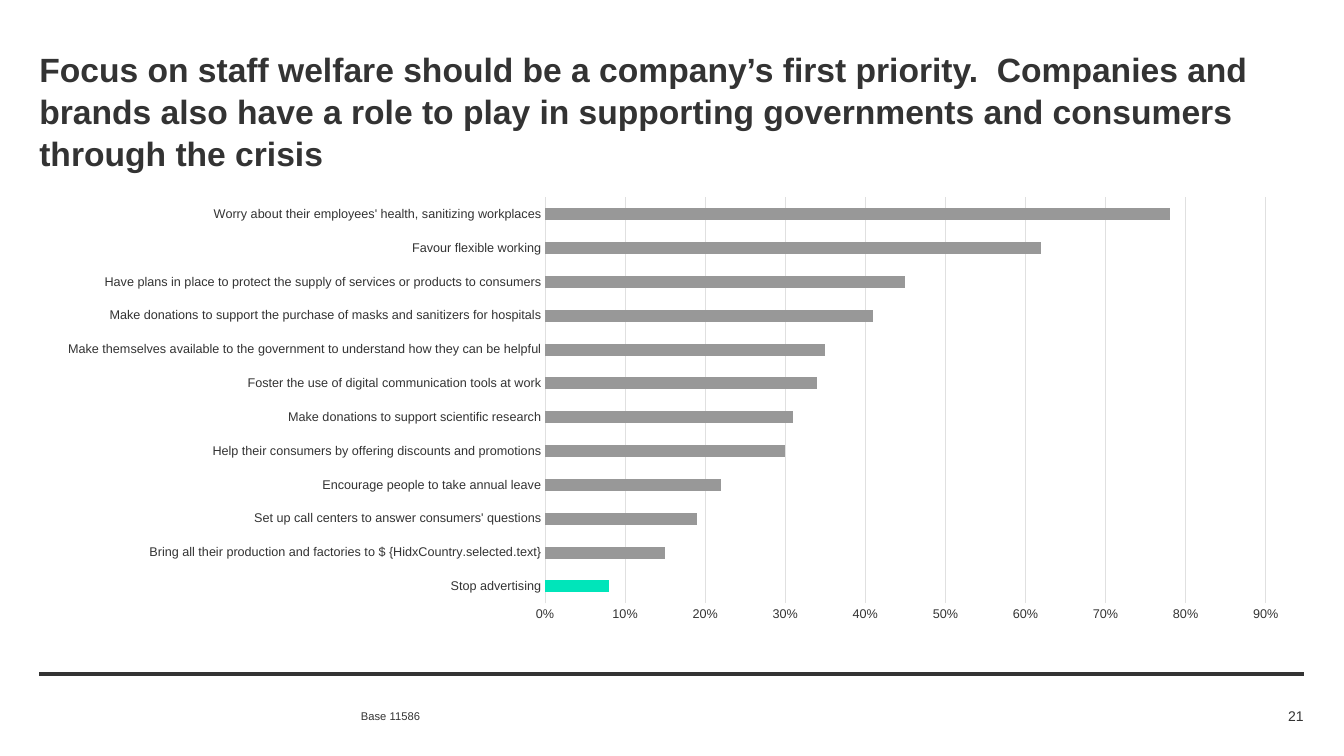
from lxml import etree
from pptx import Presentation
from pptx.chart.data import CategoryChartData as ChartData
from pptx.dml.color import RGBColor
from pptx.enum.chart import XL_CHART_TYPE as Kind, XL_TICK_MARK as Tick
from pptx.enum.shapes import MSO_CONNECTOR as Conn
from pptx.enum.text import MSO_ANCHOR as Anchor, MSO_AUTO_SIZE as Fit, PP_ALIGN as Align
from pptx.oxml import parse_xml
from pptx.oxml.ns import nsdecls, qn
from pptx.util import Pt

PX = 9144  # 100 px to the inch
FONT = "Arial"
INK, GREY, GRID, MINT = "333333", "989898", "E0E0E0", "00E5BA"
LEFT, WIDTH = 39, 1254

TITLE = (
    "Focus on staff welfare should be a company’s first priority.  "
    "Companies and brands also have a role to play in supporting "
    "governments and consumers through the crisis"
)
BARS = [
    ("Stop advertising", 0.08),
    ("Bring all their production and factories to $ {HidxCountry.selected.text}", 0.15),
    ("Set up call centers to answer consumers' questions", 0.19),
    ("Encourage people to take annual leave", 0.22),
    ("Help their consumers by offering discounts and promotions", 0.3),
    ("Make donations to support scientific research", 0.31),
    ("Foster the use of digital communication tools at work", 0.34),
    ("Make themselves available to the government to understand how they can be helpful", 0.35),
    ("Make donations to support the purchase of masks and sanitizers for hospitals", 0.41),
    ("Have plans in place to protect the supply of services or products to consumers", 0.45),
    ("Favour flexible working", 0.62),
    ("Worry about their employees' health, sanitizing workplaces", 0.78),
]
# Plot area as shares of the chart box
PLOT = {"x": 0.4, "y": 0.02, "w": 0.57, "h": 0.92}


def emu(*nums):
    return [n * PX for n in nums]


def tint(color, code):
    color.rgb = RGBColor.from_string(code)


def style(font, size, bold=False):
    font.name, font.size, font.bold = FONT, Pt(size), bold
    tint(font.color, INK)


def rule(line, code, width):
    tint(line.color, code)
    line.width = Pt(width)


def write(shape, text, size, bold=False, align=Align.LEFT, anchor=Anchor.MIDDLE):
    """Fill a shape with one paragraph, without margins."""
    frame = shape.text_frame
    frame.word_wrap, frame.auto_size = True, Fit.NONE
    frame.vertical_anchor = anchor
    frame.margin_left = frame.margin_right = 0
    frame.margin_top = frame.margin_bottom = 0
    para = frame.paragraphs[0]
    para.alignment = align
    run = para.add_run()
    run.text = text
    style(run.font, size, bold)
    return para


def head(slide, x, y, w, h):
    title = slide.shapes.title
    title.left, title.top, title.width, title.height = emu(x, y, w, h)
    para = write(title, TITLE, 24, bold=True, anchor=Anchor.TOP)
    para.line_spacing = 1.04


def place(chart):
    """Pin the inner plot area, so long labels stay on one line."""
    area = chart._chartSpace.chart.plotArea
    for old in area.findall(qn("c:layout")):
        area.remove(old)
    layout = parse_xml(f"<c:layout {nsdecls('c')}/>")
    box = etree.SubElement(layout, qn("c:manualLayout"))
    parts = {"layoutTarget": "inner", "xMode": "edge", "yMode": "edge", **PLOT}
    for tag, val in parts.items():
        etree.SubElement(box, qn(f"c:{tag}")).set("val", str(val))
    area.insert(0, layout)


def graph(slide, x, y, w, h):
    data = ChartData(number_format="0%")
    data.categories = [name for name, _ in BARS]
    data.add_series("Series 1", [val for _, val in BARS])
    frame = slide.shapes.add_chart(Kind.BAR_CLUSTERED, *emu(x, y, w, h), data)
    chart = frame.chart
    chart.has_legend = chart.has_title = False
    style(chart.font, 10)
    place(chart)

    plot = chart.plots[0]
    plot.gap_width, plot.vary_by_categories = 182, False
    bars = plot.series[0]
    bars.format.fill.solid()
    tint(bars.format.fill.fore_color, GREY)
    stop = bars.points[0].format.fill
    stop.solid()
    tint(stop.fore_color, MINT)

    cat, val = chart.category_axis, chart.value_axis
    for axis in (cat, val):
        axis.major_tick_mark = axis.minor_tick_mark = Tick.NONE
        style(axis.tick_labels.font, 9)
    cat.has_major_gridlines = False
    rule(cat.format.line, GRID, 0.75)
    val.format.line.fill.background()
    val.has_major_gridlines = True
    rule(val.major_gridlines.format.line, GRID, 0.75)
    val.minimum_scale, val.maximum_scale, val.major_unit = 0, 0.9, 0.1
    val.tick_labels.number_format = "0%"
    val.tick_labels.number_format_is_linked = False


def foot(slide, x, y, w):
    line = slide.shapes.add_connector(Conn.STRAIGHT, *emu(x, y, x + w, y))
    rule(line.line, INK, 3)
    etree.SubElement(line._element.spPr, qn("a:effectLst"))
    base = slide.shapes.add_textbox(*emu(x + 319, y + 30, 820, 22))
    write(base, "Base 11586", 8)
    page = slide.shapes.add_textbox(*emu(x + w - 106, y + 30, 106, 22))
    write(page, "21", 10, align=Align.RIGHT)


def main():
    deck = Presentation()
    deck.slide_width, deck.slide_height = emu(1333, 750)
    slide = deck.slides.add_slide(deck.slide_layouts.get_by_name("Title Only"))
    head(slide, LEFT, 47, WIDTH, 44)
    graph(slide, LEFT, 187, WIDTH, 438)
    foot(slide, LEFT, 669, WIDTH)
    deck.save("out.pptx")


if __name__ == "__main__":
    main()
